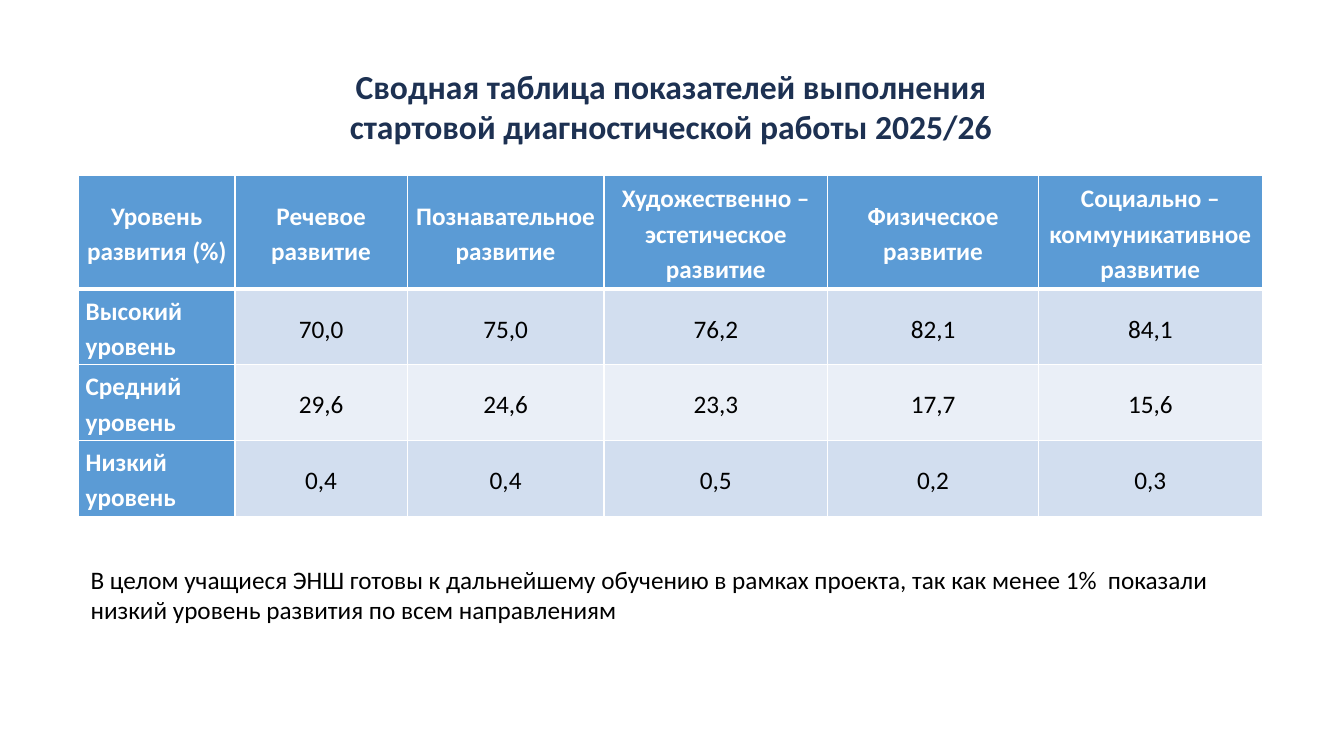
import lxml.etree
import pptx
import pptx.dml.color
import pptx.enum.text
import pptx.oxml.ns
import pptx.util

EMU_PER_PX = 9144
FONT = "Calibri"
COLORS = {
    "title": "1D3152",
    "header": "5B9BD5",
    "odd_row": "D2DEEF",
    "even_row": "EAEFF7",
    "white": "FFFFFF",
    "black": "000000",
}
ALIGN = pptx.enum.text.PP_ALIGN
ANCHOR = pptx.enum.text.MSO_ANCHOR

TITLE = "Сводная таблица показателей выполнения стартовой диагностической работы 2025/26"
CONCLUSION = (
    "В целом учащиеся ЭНШ готовы к дальнейшему обучению в рамках проекта, "
    "так как менее 1%  показали низкий уровень развития по всем направлениям"
)
COLUMN_WIDTHS = [155, 171, 195, 222, 209, 222]
ROW_HEIGHTS = [113, 75, 75, 75]
LEVELS = [
    ["Уровень развития (%)", "Речевое развитие", "Познавательное развитие",
     "Художественно – эстетическое развитие", "Физическое развитие",
     "Социально – коммуникативное развитие"],
    ["Высокий уровень", "70,0", "75,0", "76,2", "82,1", "84,1"],
    ["Средний уровень", "29,6", "24,6", "23,3", "17,7", "15,6"],
    ["Низкий уровень", "0,4", "0,4", "0,5", "0,2", "0,3"],
]


def px(length):
    return pptx.util.Emu(length * EMU_PER_PX)


def rgb(name):
    return pptx.dml.color.RGBColor.from_string(COLORS[name])


def write_text(text_frame, text, size, color, bold=False, align=ALIGN.LEFT):
    text_frame.text = text
    paragraph = text_frame.paragraphs[0]
    paragraph.alignment = align
    font = paragraph.runs[0].font
    font.name = FONT
    font.size = pptx.util.Pt(size)
    font.bold = bold
    font.color.rgb = rgb(color)
    return paragraph


def add_title(slide, text, left, top, width, height):
    title = slide.shapes.title
    title.left, title.top, title.width, title.height = map(px, (left, top, width, height))
    text_frame = title.text_frame
    text_frame.word_wrap = True
    text_frame.auto_size = pptx.enum.text.MSO_AUTO_SIZE.SHAPE_TO_FIT_TEXT
    text_frame.vertical_anchor = ANCHOR.TOP
    write_text(text_frame, text, 24, "title", True, ALIGN.CENTER)


def add_note(slide, text, left, top, width, height):
    text_box = slide.shapes.add_textbox(*map(px, (left, top, width, height)))
    text_box.text_frame.word_wrap = True
    text_box.text_frame.auto_size = pptx.enum.text.MSO_AUTO_SIZE.SHAPE_TO_FIT_TEXT
    write_text(text_box.text_frame, text, 18, "black")


def set_borders(cell, widths):
    properties = cell._tc.get_or_add_tcPr()
    for index, (side, width) in enumerate(widths.items()):
        line = lxml.etree.Element(
            pptx.oxml.ns.qn(f"a:ln{side}"), w=str(pptx.util.Pt(width))
        )
        fill = lxml.etree.SubElement(line, pptx.oxml.ns.qn("a:solidFill"))
        lxml.etree.SubElement(fill, pptx.oxml.ns.qn("a:srgbClr"), val=COLORS["white"])
        properties.insert(index, line)


def format_cell(cell, text, row, column):
    is_header = row == 0 or column == 0
    row_color = "odd_row" if row % 2 else "even_row"
    cell.fill.solid()
    cell.fill.fore_color.rgb = rgb("header" if is_header else row_color)
    cell.vertical_anchor = ANCHOR.MIDDLE
    cell.margin_left = cell.margin_right = px(7)
    cell.margin_top = cell.margin_bottom = 0
    align = ALIGN.LEFT if row and column == 0 else ALIGN.CENTER
    color = "white" if is_header else "black"
    paragraph = write_text(cell.text_frame, text, 18, color, is_header, align)
    paragraph.line_spacing = 1.15
    set_borders(cell, {
        "L": 1,
        "R": 1,
        "T": 3 if row == 1 else 1,
        "B": 3 if row == 0 else 1,
    })


def add_level_table(slide, left, top):
    table = slide.shapes.add_table(
        len(LEVELS), len(COLUMN_WIDTHS), px(left), px(top),
        px(sum(COLUMN_WIDTHS)), px(sum(ROW_HEIGHTS)),
    ).table
    for column, width in zip(table.columns, COLUMN_WIDTHS):
        column.width = px(width)
    for row, height in zip(table.rows, ROW_HEIGHTS):
        row.height = px(height)
    for row, texts in enumerate(LEVELS):
        for column, text in enumerate(texts):
            format_cell(table.cell(row, column), text, row, column)


def main():
    presentation = pptx.Presentation()
    presentation.slide_width = px(1333)
    presentation.slide_height = px(750)
    slide = presentation.slides.add_slide(
        presentation.slide_layouts.get_by_name("Title Only")
    )
    add_title(slide, TITLE, 332, 60, 667, 91)
    add_level_table(slide, 78, 174)
    add_note(slide, CONCLUSION, 80, 555, 1174, 71)
    presentation.save("out.pptx")


if __name__ == "__main__":
    main()
